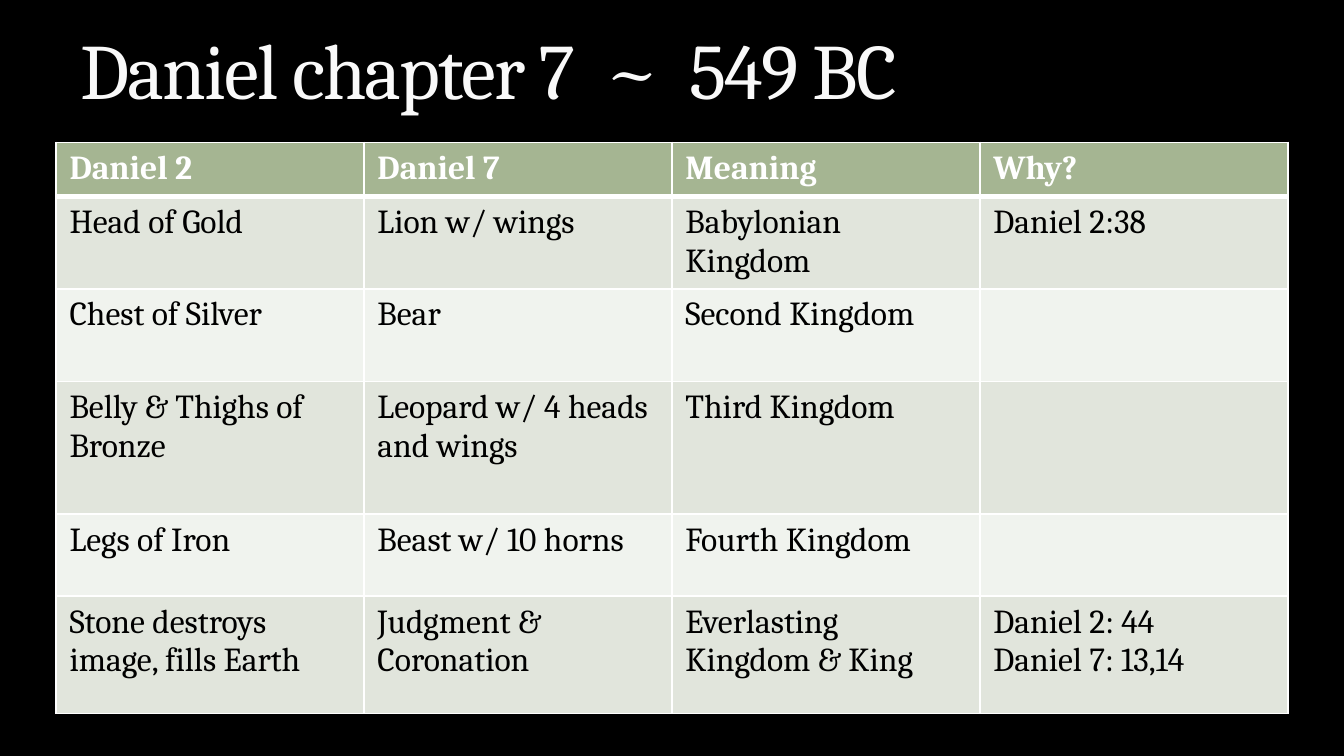
from lxml.etree import SubElement
from pptx import Presentation
from pptx.dml.color import RGBColor
from pptx.enum.text import MSO_ANCHOR, MSO_AUTO_SIZE, PP_ALIGN
from pptx.oxml.ns import qn
from pptx.util import Cm, Pt

FONT = "Cambria"
HEADER_FILL = "A5B592"
BAND_FILLS = ("F0F3EE", "E1E5DC")
ROW_HEIGHTS = (1.02, 1.75, 1.75, 2.51, 1.55, 2.22)
ROWS = (
    ("Daniel 2", "Daniel 7", "Meaning", "Why?"),
    ("Head of Gold", "Lion w/ wings", "Babylonian Kingdom", "Daniel 2:38"),
    ("Chest of Silver", "Bear", "Second Kingdom", ""),
    ("Belly & Thighs of Bronze", "Leopard w/ 4 heads and wings", "Third Kingdom", ""),
    ("Legs of Iron", "Beast w/ 10 horns", "Fourth Kingdom", ""),
    ("Stone destroys image, fills Earth", "Judgment & Coronation",
     "Everlasting Kingdom & King", "Daniel 2: 44\nDaniel 7: 13,14"),
)


def rgb(color):
    return RGBColor.from_string(color)


def set_font(p, size, color, bold=False):
    p.font.name = FONT
    p.font.size = Pt(size)
    p.font.bold = bold
    p.font.color.rgb = rgb(color)


def set_borders(cell, color, widths):
    """Draw the cell's edges; widths are points for left, right, top, bottom."""
    tc_pr = cell._tc.get_or_add_tcPr()
    for side, width in zip("LRTB", widths):
        ln = SubElement(tc_pr, qn(f"a:ln{side}"), w=str(Pt(width)))
        fill = SubElement(ln, qn("a:solidFill"))
        SubElement(fill, qn("a:srgbClr"), val=color)


def add_title(slide, text, left, top, width, height):
    sp = slide.shapes.title
    sp.left, sp.top, sp.width, sp.height = map(Cm, (left, top, width, height))
    tf = sp.text_frame
    tf.text = text
    tf.word_wrap = True
    tf.auto_size = MSO_AUTO_SIZE.NONE
    tf.vertical_anchor = MSO_ANCHOR.BOTTOM
    p = tf.paragraphs[0]
    p.alignment = PP_ALIGN.LEFT
    set_font(p, 42, "F9F9F9")
    p.runs[0].font._element.set("spc", "-100")


def add_comparison(slide, left, top, width):
    """Add the table of visions with a header row and banded body rows."""
    cols = len(ROWS[0])
    frame = slide.shapes.add_table(len(ROWS), cols, Cm(left), Cm(top),
                                   Cm(width), Cm(sum(ROW_HEIGHTS)))
    table = frame.table
    for column in table.columns:
        column.width = Cm(width / cols)
    for i, (row, height, texts) in enumerate(zip(table.rows, ROW_HEIGHTS, ROWS)):
        row.height = Cm(height)
        header = i == 0
        for cell, text in zip(row.cells, texts):
            set_borders(cell, "FFFFFF", (1, 1, 3 if i == 1 else 1, 3 if header else 1))
            cell.fill.solid()
            cell.fill.fore_color.rgb = rgb(HEADER_FILL if header else BAND_FILLS[i % 2])
            cell.text = text
            for p in cell.text_frame.paragraphs:
                set_font(p, 18, "FFFFFF" if header else "000000", header)


def main():
    prs = Presentation()
    prs.slide_width, prs.slide_height = Cm(25.4), Cm(14.29)
    slide = prs.slides.add_slide(prs.slide_layouts[5])
    slide.background.fill.solid()
    slide.background.fill.fore_color.rgb = rgb("000000")
    add_comparison(slide, 1.06, 2.69, 23.28)
    add_title(slide, "Daniel chapter 7  ~  549 BC", 1.27, 0, 22.86, 2.31)
    prs.save("out.pptx")


if __name__ == "__main__":
    main()
